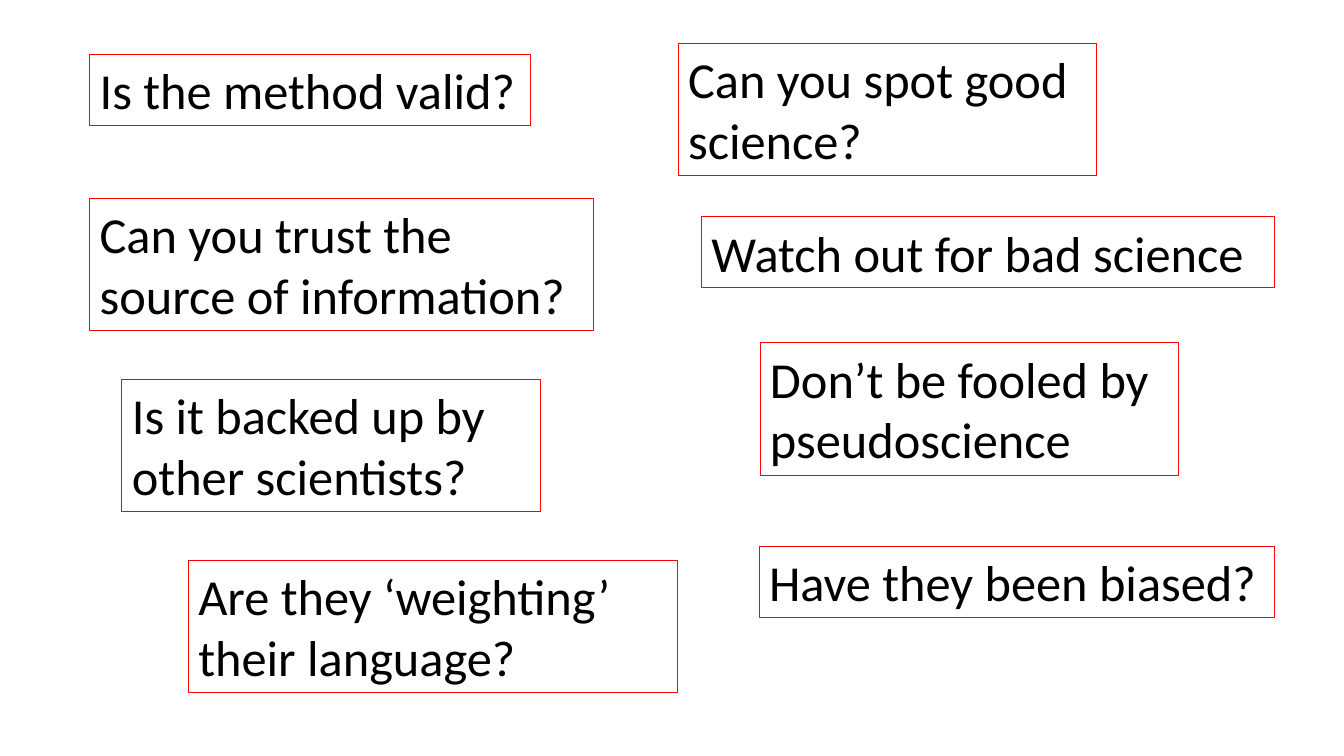
import pptx
import pptx.dml.color
import pptx.enum.text
import pptx.util


def color(hex_string):
    return pptx.dml.color.RGBColor.from_string(hex_string)


presentation = pptx.Presentation()
presentation.slide_width = pptx.util.Pt(960)
presentation.slide_height = pptx.util.Pt(540)
slide = presentation.slides.add_slide(presentation.slide_layouts[6])

# Box heights by number of text lines
heights = {1: 50.9, 2: 94.5}
font_format = {"name": "Calibri", "size": pptx.util.Pt(36)}

# Questions and warnings: text, left, top, width, lines
prompts = [
    ("Watch out for bad science", 501.1, 154.8, 409, 1),
    ("Have they been biased?", 542.2, 390.2, 367.9, 1),
    ("Is it backed up by other scientists?", 87.1, 271.2, 298.8, 2),
    ("Can you spot good science?", 484.4, 31, 298.8, 2),
    ("Don’t be fooled by pseudoscience", 542.9, 245, 298.8, 2),
    ("Can you trust the source of information?", 64.1, 141.8, 360, 2),
    ("Is the method valid?", 64.1, 38.9, 314.6, 1),
    ("Are they ‘weighting’ their language?", 134.6, 400.3, 349.2, 2),
]

# Red outlined text boxes
for text, left, top, width, lines in prompts:
    box = slide.shapes.add_textbox(
        pptx.util.Pt(left), pptx.util.Pt(top),
        pptx.util.Pt(width), pptx.util.Pt(heights[lines]))
    box.line.color.rgb = color("FF0000")
    box.line.width = pptx.util.Pt(0.75)
    box.text_frame.word_wrap = True
    box.text_frame.auto_size = pptx.enum.text.MSO_AUTO_SIZE.SHAPE_TO_FIT_TEXT
    paragraph = box.text_frame.paragraphs[0]
    paragraph.text = text
    for attribute, value in font_format.items():
        setattr(paragraph.font, attribute, value)
    paragraph.font.color.rgb = color("000000")

presentation.save("out.pptx")
